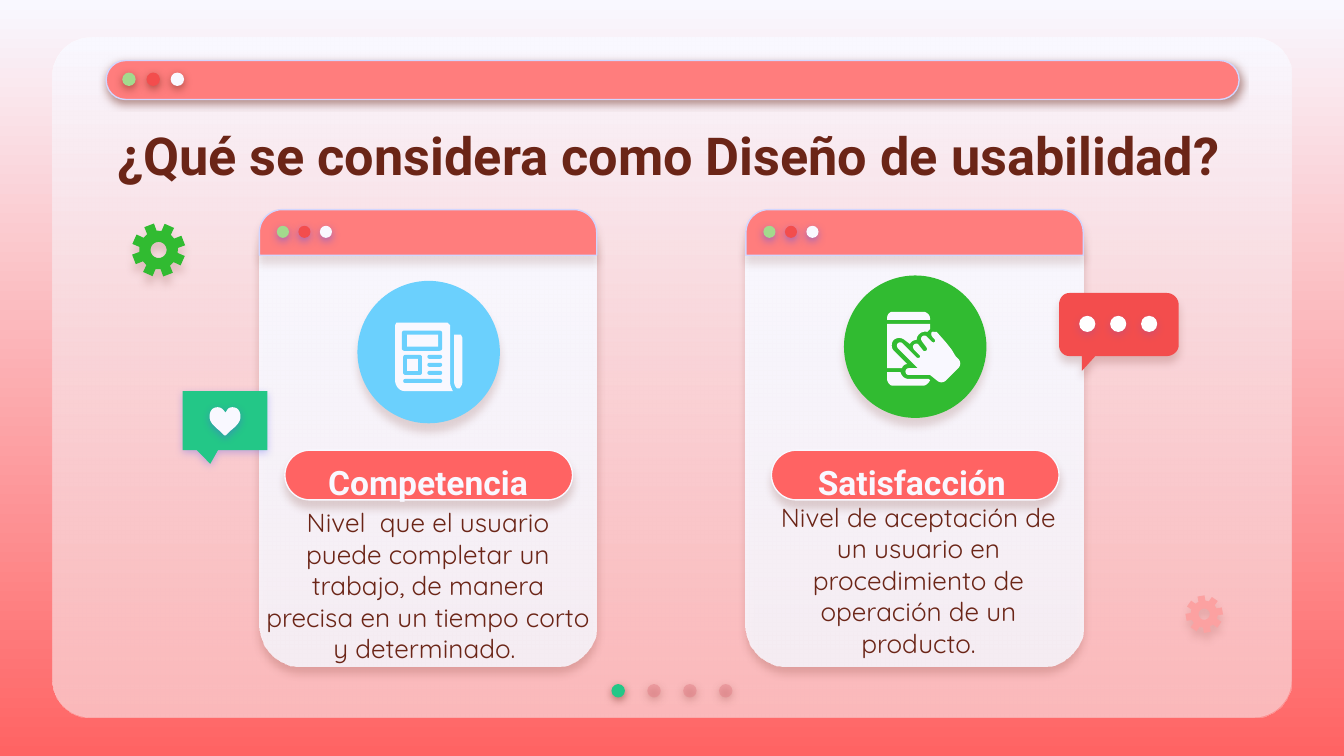
from math import cos, radians, sin

from lxml import etree
from pptx import Presentation
from pptx.dml.color import RGBColor
from pptx.enum.shapes import MSO_SHAPE
from pptx.enum.text import MSO_ANCHOR, PP_ALIGN
from pptx.oxml.ns import qn
from pptx.util import Inches, Pt

OVAL = MSO_SHAPE.OVAL
RECT = MSO_SHAPE.RECTANGLE
ROUND = MSO_SHAPE.ROUNDED_RECTANGLE
ROUND_TOP = MSO_SHAPE.ROUND_2_SAME_RECTANGLE
CALLOUT = MSO_SHAPE.ROUNDED_RECTANGULAR_CALLOUT
CENTER = PP_ALIGN.CENTER
MIDDLE = MSO_ANCHOR.MIDDLE

PALE = RGBColor(0xF9, 0xF8, 0xFF)
WHITE = RGBColor(0xFF, 0xFF, 0xFF)
BROWN = RGBColor(0x6B, 0x25, 0x17)
CORAL = RGBColor(0xFF, 0x63, 0x63)
SALMON = RGBColor(0xFF, 0x7D, 0x7D)
PINK = RGBColor(0xFC, 0xA1, 0xA1)
ROSE = RGBColor(0xE2, 0x7B, 0x83)
RED = RGBColor(0xF3, 0x4D, 0x4D)
LIME = RGBColor(0xA3, 0xDA, 0x8D)
GREEN = RGBColor(0x31, 0xBB, 0x31)
TEAL = RGBColor(0x23, 0xC7, 0x87)
SKY = RGBColor(0x6B, 0xD0, 0xFD)
LILAC = RGBColor(0xD2, 0xD6, 0xFF)
INDIGO = RGBColor(0x53, 0x52, 0xEE)

# Shadows: colour, opacity %, distance in points
DOT_SHADOW = (BROWN, 50, 1.5)
INDIGO_SHADOW = (INDIGO, 50, 1.5)
SOFT_SHADOW = (BROWN, 18, 3.8)
ICON_SHADOW = (BROWN, 16, 4.5)

# Outlines: a pair is a line to that point, six numbers are a Bezier curve
HEART = [[(1.62, 3.03), (1.58, 3.03, 1.56, 3.06, 1.56, 3.1),
          (1.56, 3.14, 1.59, 3.17, 1.64, 3.21), (1.67, 3.24), (1.68, 3.24),
          (1.71, 3.21), (1.76, 3.17, 1.79, 3.14, 1.79, 3.1),
          (1.79, 3.06, 1.77, 3.03, 1.73, 3.03),
          (1.7, 3.03, 1.69, 3.05, 1.68, 3.07),
          (1.66, 3.05, 1.65, 3.03, 1.62, 3.03)]]
BUBBLE = [[(8.68, 2.18), (8.73, 2.18, 8.77, 2.22, 8.77, 2.27), (8.77, 2.57),
           (8.77, 2.61, 8.73, 2.65, 8.68, 2.65), (8.15, 2.65), (8.05, 2.76),
           (8.05, 2.65), (7.96, 2.65), (7.91, 2.65, 7.88, 2.61, 7.88, 2.57),
           (7.88, 2.27), (7.88, 2.22, 7.91, 2.18, 7.96, 2.18)]]
PAGE = [[(2.95, 2.4), (2.94, 2.42), (2.94, 2.83),
         (2.94, 2.87, 2.97, 2.91, 3.01, 2.91), (3.37, 2.91),
         (3.36, 2.89, 3.35, 2.87, 3.35, 2.85), (3.35, 2.42), (3.33, 2.4)]]
PAGE_EDGE = [[(3.38, 2.49), (3.38, 2.85), (3.38, 2.86, 3.39, 2.88, 3.4, 2.89),
              (3.42, 2.89), (3.43, 2.88, 3.44, 2.86, 3.44, 2.85),
              (3.44, 2.51), (3.43, 2.49)]]
PHONE_TOP = [[(6.64, 2.32), (6.62, 2.32, 6.6, 2.34, 6.6, 2.37), (6.6, 2.38),
              (6.92, 2.38), (6.92, 2.37), (6.92, 2.34, 6.89, 2.32, 6.87, 2.32)]]
PHONE_SCREEN = [[(6.6, 2.41), (6.6, 2.74), (6.71, 2.74),
                 (6.72, 2.72, 6.73, 2.71, 6.75, 2.71), (6.65, 2.61),
                 (6.63, 2.59, 6.63, 2.55, 6.65, 2.53),
                 (6.67, 2.51, 6.71, 2.51, 6.73, 2.53), (6.77, 2.56),
                 (6.78, 2.54, 6.8, 2.53, 6.82, 2.53),
                 (6.82, 2.49, 6.86, 2.46, 6.9, 2.47), (6.92, 2.45), (6.92, 2.41)]]
PHONE_BASE = [[(6.6, 2.77), (6.6, 2.82), (6.6, 2.84, 6.62, 2.87, 6.64, 2.87),
               (6.87, 2.87), (6.89, 2.87, 6.91, 2.85, 6.92, 2.83), (6.91, 2.82),
               (6.76, 2.82), (6.73, 2.82, 6.71, 2.8, 6.7, 2.77)]]
HAND = [[(6.95, 2.47), (6.93, 2.46, 6.92, 2.49, 6.94, 2.51), (6.95, 2.52),
         (6.97, 2.54, 6.95, 2.56, 6.93, 2.54), (6.89, 2.5),
         (6.87, 2.49, 6.84, 2.51, 6.86, 2.54), (6.89, 2.58),
         (6.91, 2.6, 6.89, 2.62, 6.87, 2.61), (6.83, 2.56),
         (6.81, 2.55, 6.78, 2.57, 6.8, 2.6), (6.84, 2.64),
         (6.86, 2.66, 6.83, 2.67, 6.82, 2.66), (6.71, 2.55),
         (6.69, 2.54, 6.66, 2.56, 6.68, 2.59), (6.83, 2.74), (6.76, 2.74),
         (6.73, 2.74, 6.73, 2.79, 6.76, 2.79), (6.92, 2.79), (6.97, 2.83),
         (6.99, 2.85, 7.02, 2.85, 7.04, 2.83), (7.13, 2.74),
         (7.15, 2.72, 7.15, 2.69, 7.13, 2.67), (7.11, 2.65),
         (7.08, 2.6), (7.04, 2.55), (6.97, 2.47)]]


def flatten(contour, steps=8):
    """Turn the curves of a contour into short lines."""
    points = [contour[0]]
    for seg in contour[1:]:
        if len(seg) == 2:
            points.append(seg)
            continue
        x0, y0 = points[-1]
        x1, y1, x2, y2, x3, y3 = seg
        for i in range(1, steps + 1):
            t = i / steps
            u = 1 - t
            a, b, c, d = u ** 3, 3 * u * u * t, 3 * u * t * t, t ** 3
            points.append((a * x0 + b * x1 + c * x2 + d * x3,
                           a * y0 + b * y1 + c * y2 + d * y3))
    return [(Inches(x), Inches(y)) for x, y in points]


def gear_outline(cx, cy, radius, start, teeth=8):
    """Toothed rim and round hole; start is the angle of one tooth."""
    def polar(share, angle):
        a = radians(angle)
        return cx + share * radius * cos(a), cy + share * radius * sin(a)

    tooth = [(0.72, -15), (1, -11), (1, 11), (0.72, 15)]
    rim = [polar(share, start + 360 / teeth * i + offset)
           for i in range(teeth) for share, offset in tooth]
    return [rim, [polar(0.3, a) for a in range(0, 360, 15)]]


class Deck:
    def __init__(self, prs):
        self.s = prs.slides.add_slide(prs.slide_layouts[6])

    def set_alpha(self, color, percent):
        etree.SubElement(color, qn("a:alpha")).set("val", str(int(percent * 1000)))

    def gradient(self, fill, top, bottom):
        fill.gradient()
        fill.gradient_angle = 270
        for stop, color in zip(fill.gradient_stops, (top, bottom)):
            stop.color.rgb = color

    def style(self, sp, fill, line=None, shadow=None, alpha=None):
        """Apply a solid colour or a (top, bottom) gradient; alpha is the last colour's."""
        if isinstance(fill, RGBColor):
            sp.fill.solid()
            sp.fill.fore_color.rgb = fill
        else:
            self.gradient(sp.fill, *fill)
        if alpha is not None:
            self.set_alpha(list(sp._element.spPr.iter(qn("a:srgbClr")))[-1], alpha)
        if line is None:
            sp.line.fill.background()
        else:
            sp.line.color.rgb = line
            sp.line.width = Pt(0.75)
        sp.shadow.inherit = False
        if shadow:
            color, opacity, dist = shadow
            effects = sp._element.spPr.find(qn("a:effectLst"))
            outer = etree.SubElement(effects, qn("a:outerShdw"), blurRad=str(Pt(4.5)),
                                     dist=str(Pt(dist)), dir="5400000",
                                     algn="bl", rotWithShape="0")
            clr = etree.SubElement(outer, qn("a:srgbClr"), val=str(color))
            self.set_alpha(clr, opacity)

    def shape(self, kind, x, y, w, h, fill, adj=(), **look):
        sp = self.s.shapes.add_shape(kind, Inches(x), Inches(y), Inches(w), Inches(h))
        for i, value in enumerate(adj):
            sp.adjustments[i] = value
        self.style(sp, fill, **look)

    def dots(self, x, y, size, step, colors, shadow=None):
        for i, color in enumerate(colors):
            self.shape(OVAL, x + i * step, y, size, size, color, shadow=shadow)

    def outline(self, contours, fill, shadow=None):
        first, *holes = [flatten(c) for c in contours]
        fb = self.s.shapes.build_freeform(*first[0], scale=1.0)
        fb.add_line_segments(first[1:], close=True)
        for hole in holes:
            fb.move_to(*hole[0])
            fb.add_line_segments(hole[1:], close=True)
        self.style(fb.convert_to_shape(), fill, shadow=shadow)

    def text(self, x, y, w, h, words, size, color=BROWN, font="Roboto",
             bold=False, side=0.1, spacing=None):
        tf = self.s.shapes.add_textbox(Inches(x), Inches(y), Inches(w), Inches(h)).text_frame
        tf.word_wrap = True
        tf.vertical_anchor = MIDDLE
        tf.margin_left = tf.margin_right = Inches(side)
        tf.margin_top = tf.margin_bottom = Inches(0.1)
        p = tf.paragraphs[0]
        p.alignment = CENTER
        p.line_spacing = spacing
        r = p.add_run()
        r.text = words
        r.font.name, r.font.size, r.font.bold = font, Pt(size), bold
        r.font.color.rgb = color

    def card(self, x):
        """Window with a title bar and three dots."""
        self.shape(ROUND, x, 1.56, 2.51, 3.4, (PALE, PALE), [0.124],
                   shadow=(BROWN, 22, 3.8), alpha=87)
        self.shape(ROUND_TOP, x, 1.56, 2.51, 0.34, SALMON, [0.5, 0],
                   line=LILAC, shadow=(BROWN, 15, 3.8))
        self.dots(x + 0.13, 1.68, 0.09, 0.16, [LIME, RED, PALE], INDIGO_SHADOW)


def main():
    prs = Presentation()
    prs.slide_width = Inches(10)
    prs.slide_height = prs.slide_width * 9 // 16
    d = Deck(prs)
    d.gradient(d.s.background.fill, PALE, CORAL)

    for fill, alpha in ((PALE, None), ((PALE, PINK), 72)):
        d.shape(ROUND, 0.39, 0.28, 9.22, 5.06, fill, [0.056], alpha=alpha)
    for i in range(4):
        d.shape(OVAL, 4.55 + i * 0.8 / 3, 5.09, 0.1, 0.1, ROSE if i else TEAL,
                shadow=DOT_SHADOW, alpha=44 if i else None)
    d.shape(ROUND, 0.79, 0.45, 8.43, 0.29, SALMON, [0.5], line=LILAC, shadow=DOT_SHADOW)
    d.dots(0.91, 0.54, 0.1, 0.18, [LIME, RED, PALE], DOT_SHADOW)
    card_lefts = (1.93, 5.55)
    for x in card_lefts:
        d.card(x)
    for x in card_lefts:
        d.shape(ROUND, x + 0.19, 3.35, 2.14, 0.37, CORAL, [0.5],
                line=PALE, shadow=SOFT_SHADOW)

    d.text(0.21, 0.8, 9.52, 0.63, "¿Qué se considera como Diseño de usabilidad?", 28,
           bold=True, spacing=1.15)
    for x, label in ((2.17, "Competencia"), (5.77, "Satisfacción")):
        d.text(x, 3.45, 2.03, 0.27, label, 18, PALE, bold=True)
    d.text(1.93, 3.89, 2.51, 0.93, "Nivel  que el usuario puede completar un trabajo, "
           "de manera precisa en un tiempo corto y determinado. ", 14,
           font="Quicksand", side=0.05)
    d.text(5.6, 3.85, 2.47, 0.93, "Nivel de aceptación de un usuario en procedimiento "
           "de operación de un producto.", 14, font="Quicksand")

    for x, y, color in ((2.66, 2.09, SKY), (6.28, 2.05, GREEN)):
        d.shape(OVAL, x, y, 1.06, 1.06, color, shadow=ICON_SHADOW)

    # Newspaper icon
    d.outline(PAGE, PALE)
    d.outline(PAGE_EDGE, PALE)
    for x, y, w in ((2.99, 2.46, 0.3), (3, 2.64, 0.14)):
        d.shape(ROUND, x, y, w, 0.15, SKY, [0.12])
    for x, y, w in ((3.03, 2.49, 0.23), (3.03, 2.67, 0.08)):
        d.shape(RECT, x, y, w, 0.09, PALE)
    for x, y, w in ((3.18, 2.64, 0.11), (3.18, 2.7, 0.11), (3.18, 2.76, 0.11), (3, 2.82, 0.29)):
        d.shape(ROUND, x, y, w, 0.03, SKY, [0.5])

    # Phone icon
    for part in (PHONE_TOP, PHONE_SCREEN, PHONE_BASE, HAND):
        d.outline(part, PALE)

    d.outline(gear_outline(1.18, 1.86, 0.2, 24), GREEN, ICON_SHADOW)
    d.outline(gear_outline(8.96, 4.57, 0.14, 35), PINK, (BROWN, 15, 3.8))
    d.shape(CALLOUT, 1.36, 2.91, 0.63, 0.44, TEAL, [-0.174, 0.731, 0],
            shadow=(INDIGO, 31, 1.5))
    d.outline(HEART, PALE, (INDIGO, 38, 1.5))
    d.outline(BUBBLE, RED, SOFT_SHADOW)
    d.dots(8.03, 2.35, 0.12, 0.23, [WHITE] * 3, (INDIGO, 18, 1.5))
    prs.save("out.pptx")


if __name__ == "__main__":
    main()
